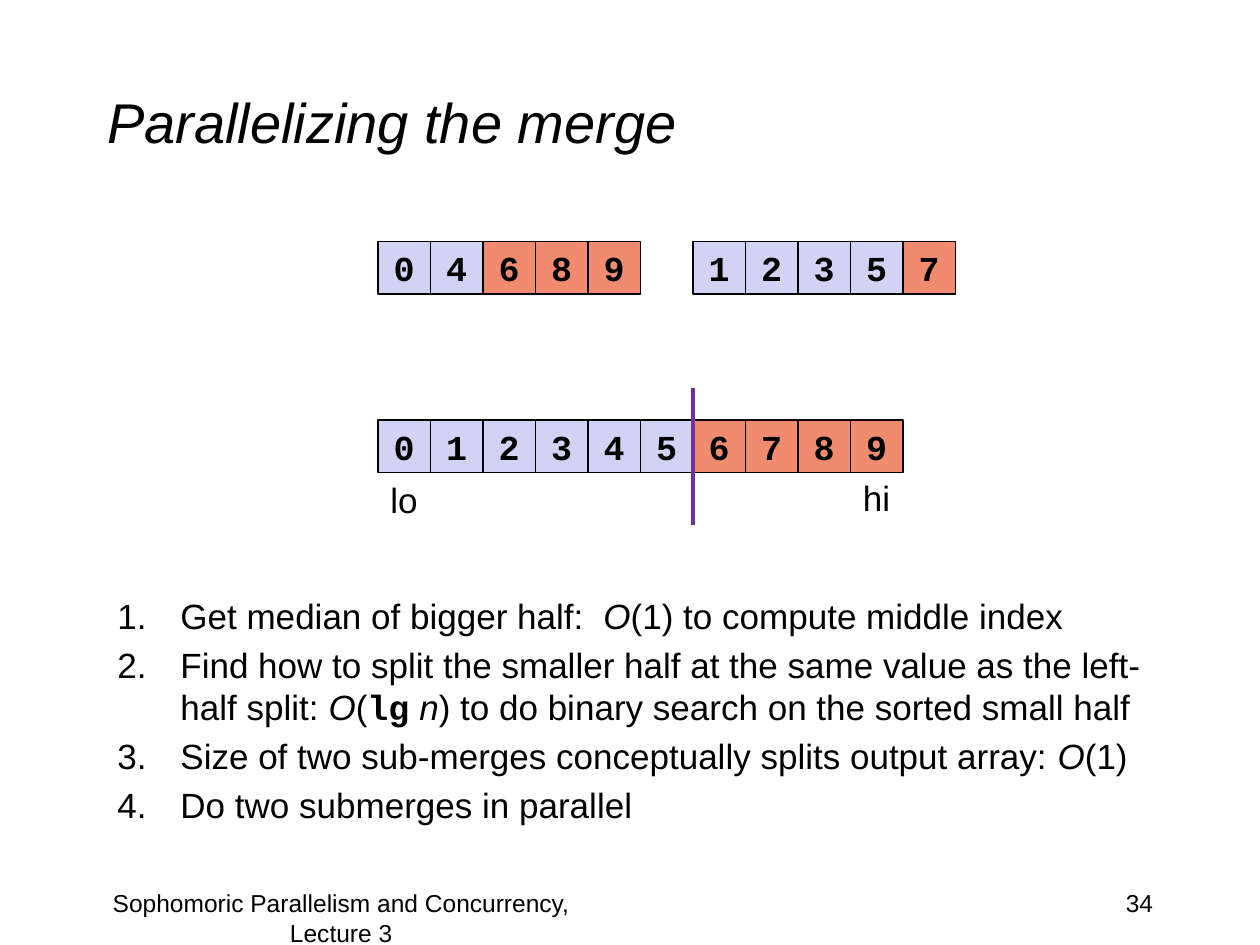
import pptx
import pptx.dml.color
import pptx.enum.shapes
import pptx.enum.text
import pptx.oxml.ns
import pptx.util
from lxml import etree

Pt = pptx.util.Pt
RGBColor = pptx.dml.color.RGBColor
Align = pptx.enum.text.PP_ALIGN
Anchor = pptx.enum.text.MSO_ANCHOR
qn = pptx.oxml.ns.qn

BLACK = RGBColor(0x00, 0x00, 0x00)
LAVENDER = RGBColor(0xD2, 0xD2, 0xF4)
CORAL = RGBColor(0xF1, 0x8B, 0x6F)
PURPLE = RGBColor(0x70, 0x30, 0xA0)

CELL = 30
ARRAY_LEFT = 216
INPUT_TOP = 138
OUTPUT_TOP = 240

ITALIC = {"italic": True}
CODE = {"name": "Courier New", "bold": True}
STEPS = [
    [("Get median of bigger half:  ", {}), ("O", ITALIC),
     ("(1) to compute middle index", {})],
    [("Find how to split the smaller half at the same value as the left-half split: ", {}),
     ("O", ITALIC), ("(", {}), ("lg", CODE), (" n", ITALIC),
     (") to do binary search on the sorted small half", {})],
    [("Size of two sub-merges conceptually splits output array: ", {}),
     ("O", ITALIC), ("(1)", {})],
    [("Do two submerges in parallel", {})],
]


class SlideBuilder:
    def __init__(self, page):
        self.page = page
        self.font = {"name": "Arial", "size": Pt(20), "bold": False, "italic": False}

    def add_span(self, para, text, **changes):
        span = para.add_run()
        span.text = text
        for name, value in {**self.font, **changes}.items():
            setattr(span.font, name, value)
        span.font.color.rgb = BLACK

    def title(self, text, left, top, width, height):
        box = self.page.shapes.title
        place = {"left": left, "top": top, "width": width, "height": height}
        for name, value in place.items():
            setattr(box, name, Pt(value))
        box.text_frame.vertical_anchor = Anchor.MIDDLE
        para = box.text_frame.paragraphs[0]
        para.alignment = Align.LEFT
        self.add_span(para, text, size=Pt(32), italic=True)

    def text_box(self, left, top, width, height, wrap=True):
        box = self.page.shapes.add_textbox(Pt(left), Pt(top), Pt(width), Pt(height))
        box.text_frame.word_wrap = wrap
        return box.text_frame

    def label(self, text, left, top, width, height, align=Align.LEFT, wrap=True, **changes):
        para = self.text_box(left, top, width, height, wrap).paragraphs[0]
        para.alignment = align
        self.add_span(para, text, **changes)

    def cell(self, text, left, top, color):
        box = self.page.shapes.add_shape(
            pptx.enum.shapes.MSO_SHAPE.RECTANGLE, Pt(left), Pt(top), Pt(CELL), Pt(CELL))
        box.shadow.inherit = False
        box.fill.solid()
        box.fill.fore_color.rgb = color
        box.line.color.rgb = BLACK
        box.line.width = Pt(0.75)
        box.text_frame.word_wrap = False
        box.text_frame.vertical_anchor = Anchor.MIDDLE
        para = box.text_frame.paragraphs[0]
        para.alignment = Align.CENTER
        self.add_span(para, text, **CODE)

    def array(self, values, left, top, pivot=6):
        """Draw a row of cells, coloured by which side of the pivot they fall on."""
        for index, value in enumerate(values):
            color = LAVENDER if value < pivot else CORAL
            self.cell(str(value), left + index * CELL, top, color)

    def numbered_list(self, items, left, top, width, height):
        frame = self.text_box(left, top, width, height)
        for index, spans in enumerate(items):
            para = frame.add_paragraph() if index else frame.paragraphs[0]
            para.space_before = Pt(4)
            properties = para._p.get_or_add_pPr()
            properties.set("marL", str(Pt(36)))
            properties.set("indent", str(-Pt(36)))
            etree.SubElement(properties, qn("a:buFont"), typeface="+mj-lt")
            etree.SubElement(properties, qn("a:buAutoNum"), type="arabicPeriod")
            for text, changes in spans:
                self.add_span(para, text, **changes)

    def line(self, start_x, start_y, end_x, end_y, color, width):
        line = self.page.shapes.add_connector(
            pptx.enum.shapes.MSO_CONNECTOR.STRAIGHT,
            Pt(start_x), Pt(start_y), Pt(end_x), Pt(end_y))
        line.line.color.rgb = color
        line.line.width = Pt(width)
        etree.SubElement(line._element.spPr, qn("a:effectLst"))


def main():
    deck = pptx.Presentation()
    deck.slide_width, deck.slide_height = Pt(720), Pt(540)
    slide = SlideBuilder(deck.slides.add_slide(deck.slide_layouts[5]))

    slide.title("Parallelizing the merge", 54, 24, 612, 90)
    slide.label("34", 516, 504, 150, 36, Align.RIGHT, size=Pt(14))
    slide.label("Sophomoric Parallelism and Concurrency, Lecture 3",
                36, 504, 318, 36, Align.CENTER, size=Pt(14))

    split = ARRAY_LEFT + 6 * CELL
    slide.array([0, 4, 6, 8, 9], ARRAY_LEFT, INPUT_TOP)
    slide.array([1, 2, 3, 5, 7], split, INPUT_TOP)
    slide.numbered_list(STEPS, 60, 336, 624, 138)
    slide.array(range(10), ARRAY_LEFT, OUTPUT_TOP)
    slide.label("lo", ARRAY_LEFT, OUTPUT_TOP + CELL, CELL, 31.5, wrap=False)
    slide.label("hi", ARRAY_LEFT + 9 * CELL, 268.75, CELL, 31.5, wrap=False)
    slide.line(split, 222, split, 300, PURPLE, 2.25)

    deck.save("out.pptx")


if __name__ == "__main__":
    main()
